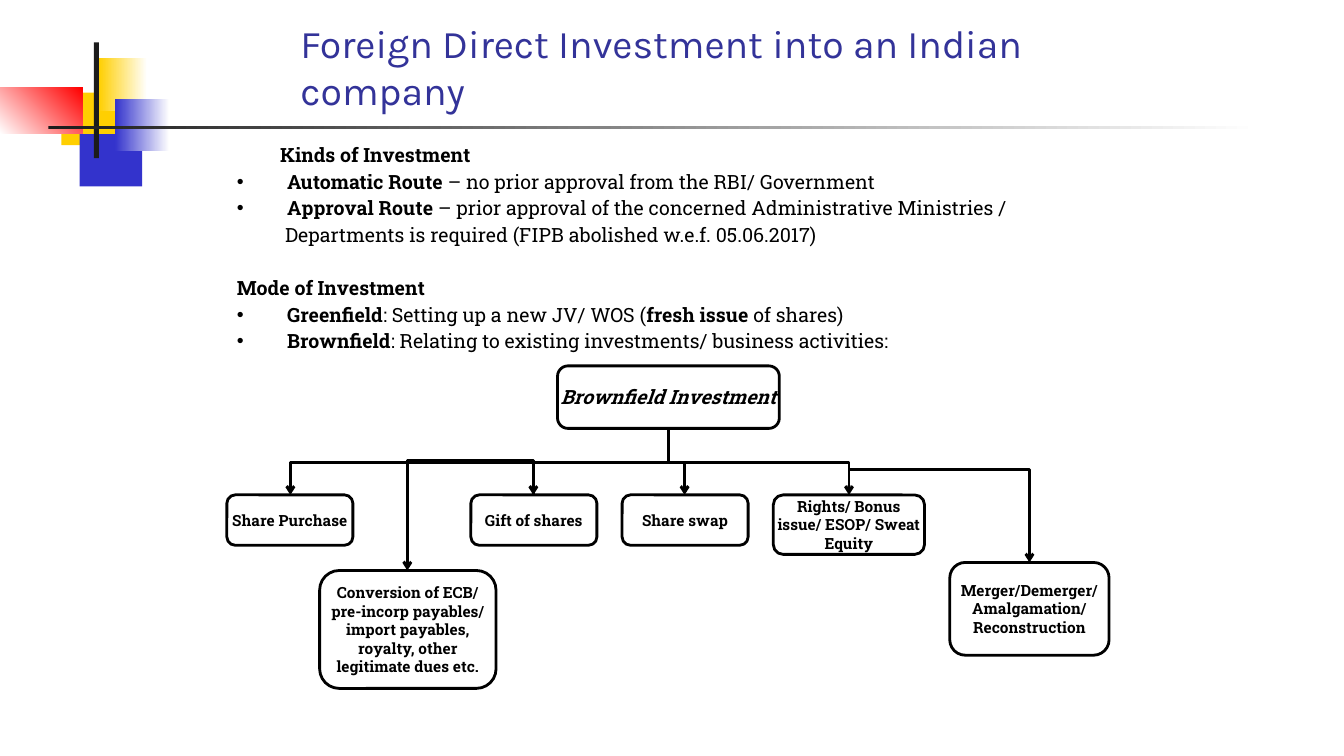
from dataclasses import dataclass

from lxml.etree import SubElement
from pptx import Presentation
from pptx.dml.color import RGBColor
from pptx.enum.shapes import MSO_CONNECTOR, MSO_SHAPE
from pptx.enum.text import MSO_ANCHOR, MSO_AUTO_SIZE, PP_ALIGN
from pptx.oxml.ns import qn
from pptx.slide import Slide
from pptx.text.text import _Paragraph
from pptx.util import Emu, Pt

EMU_PER_PX = 9144

BLACK = RGBColor(0x00, 0x00, 0x00)
WHITE = RGBColor(0xFF, 0xFF, 0xFF)
CHARCOAL = RGBColor(0x1C, 0x1C, 0x1C)
YELLOW = RGBColor(0xFF, 0xCF, 0x01)
BLUE = RGBColor(0x33, 0x33, 0xCC)
RED = RGBColor(0xFF, 0x00, 0x00)
TITLE_BLUE = RGBColor(0x33, 0x33, 0x99)

TITLE_FONT = "Karla"
BODY_FONT = "Roboto Slab"


@dataclass(frozen=True)
class Rect:
    x: int
    y: int
    w: int
    h: int


@dataclass(frozen=True)
class Ornament:
    rect: Rect
    colors: tuple[RGBColor, ...]
    angle: int = 0


@dataclass(frozen=True)
class Line:
    runs: tuple[tuple[str, bool], ...]
    left: int = 0
    bullet: bool = False
    before: int = 0


@dataclass(frozen=True)
class Box:
    rect: Rect
    text: str
    size: int = 11
    italic: bool = False


@dataclass(frozen=True)
class Link:
    start: tuple[int, int]
    end: tuple[int, int]
    bend: float = 0.5


ORNAMENTS = (
    Ornament(Rect(61, 92, 64, 52), (YELLOW,)),
    Ornament(Rect(79, 133, 62, 52), (BLUE,)),
    Ornament(Rect(98, 58, 48, 52), (YELLOW, WHITE)),
    Ornament(Rect(114, 98, 54, 52), (BLUE, WHITE)),
    Ornament(Rect(0, 87, 82, 46), (WHITE, RED), 45),
    Ornament(Rect(93, 42, 5, 115), (CHARCOAL,)),
    Ornament(Rect(48, 125, 1200, 3), (CHARCOAL, WHITE)),
)

LINES = (
    Line((("Kinds of Investment", True),), 43),
    Line((("Automatic Route ", True),
          ("– no prior approval from the RBI/ Government", False)), 50, True),
    Line((("Approval Route ", True),
          ("– prior approval of the concerned Administrative Ministries /", False)), 50, True),
    Line((("Departments is required (FIPB abolished w.e.f. 05.06.2017)", False),), 48),
    Line((("Mode of Investment", True),), before=19),
    Line((("Greenfield", True), (": Setting up a new JV/ WOS (", False),
          ("fresh issue ", True), ("of shares)", False)), 50, True),
    Line((("Brownfield", True),
          (": Relating to existing investments/ business activities:", False)), 50, True),
)

ROW_TOP = 491
BOXES = (
    Box(Rect(553, 363, 220, 62), "Brownfield Investment", 14, True),
    Box(Rect(225, ROW_TOP, 125, 50), "Share Purchase"),
    Box(Rect(467, ROW_TOP, 125, 50), "Gift of shares"),
    Box(Rect(617, ROW_TOP, 125, 50), "Share swap"),
    Box(Rect(767, ROW_TOP, 150, 59), "Rights/ Bonus issue/ ESOP/ Sweat Equity"),
    Box(Rect(942, 558, 158, 92), "Merger/Demerger/ Amalgamation/ Reconstruction"),
    Box(Rect(317, 566, 175, 117),
        "Conversion of ECB/ pre-incorp payables/ import payables, royalty, other legitimate dues etc."),
)

ROOT = (663, 426)
GIFT = (529, ROW_TOP)
RIGHTS = (842, ROW_TOP)
LINKS = (
    *(Link(ROOT, end) for end in ((288, ROW_TOP), GIFT, (679, ROW_TOP), RIGHTS)),
    Link(GIFT, (404, 566), -0.45),
    Link(RIGHTS, (1021, 558), -0.375),
)


def px(n: float) -> Emu:
    return Emu(round(n * EMU_PER_PX))


def place(rect: Rect) -> tuple[Emu, Emu, Emu, Emu]:
    return px(rect.x), px(rect.y), px(rect.w), px(rect.h)


def add_run(p: _Paragraph, text: str, font: str, size: int, color: RGBColor,
            bold: bool = False, italic: bool = False) -> None:
    r = p.add_run()
    r.text = text
    r.font.name = font
    r.font.size = Pt(size)
    r.font.color.rgb = color
    r.font.bold = bold
    r.font.italic = italic


def add_ornament(s: Slide, item: Ornament) -> None:
    sp = s.shapes.add_shape(MSO_SHAPE.RECTANGLE, *place(item.rect))
    sp.shadow.inherit = False
    sp.line.fill.background()
    if len(item.colors) == 1:
        sp.fill.solid()
        sp.fill.fore_color.rgb = item.colors[0]
        return
    sp.fill.gradient()
    sp.fill.gradient_angle = item.angle
    for stop, color in zip(sp.fill.gradient_stops, item.colors):
        stop.color.rgb = color


def set_title(s: Slide, text: str) -> None:
    sp = s.shapes.title
    sp.left, sp.top, sp.width, sp.height = place(Rect(288, 17, 846, 101))
    tf = sp.text_frame
    tf.word_wrap = True
    tf.auto_size = MSO_AUTO_SIZE.NONE
    tf.vertical_anchor = MSO_ANCHOR.BOTTOM
    p = tf.paragraphs[0]
    p.alignment = PP_ALIGN.LEFT
    add_run(p, text, TITLE_FONT, 28, TITLE_BLUE)


def add_body(s: Slide, lines: tuple[Line, ...]) -> None:
    sp = s.shapes.add_textbox(*place(Rect(225, 134, 901, 217)))
    tf = sp.text_frame
    tf.word_wrap = True
    for i, line in enumerate(lines):
        p = tf.add_paragraph() if i else tf.paragraphs[0]
        p.line_spacing = Pt(19)
        p.space_before = Pt(line.before)
        pPr = p._p.get_or_add_pPr()
        pPr.set("marL", str(px(line.left)))
        if line.bullet:
            pPr.set("indent", str(-px(line.left)))
            SubElement(pPr, qn("a:buFont"), typeface="Arial")
            SubElement(pPr, qn("a:buChar"), char="•")
        for text, bold in line.runs:
            add_run(p, text, BODY_FONT, 14, BLACK, bold)


def add_box(s: Slide, box: Box) -> None:
    sp = s.shapes.add_shape(MSO_SHAPE.ROUNDED_RECTANGLE, *place(box.rect))
    sp.shadow.inherit = False
    sp.fill.solid()
    sp.fill.fore_color.rgb = WHITE
    sp.line.color.rgb = BLACK
    sp.line.width = Pt(2)
    tf = sp.text_frame
    tf.word_wrap = True
    tf.vertical_anchor = MSO_ANCHOR.MIDDLE
    tf.margin_left = tf.margin_right = tf.margin_top = tf.margin_bottom = 0
    p = tf.paragraphs[0]
    p.alignment = PP_ALIGN.CENTER
    p.space_after = Pt(9)
    add_run(p, box.text, BODY_FONT, box.size, BLACK, True, box.italic)


def add_link(s: Slide, link: Link) -> None:
    (x1, y1), (x2, y2) = link.start, link.end
    drop, span = y2 - y1, abs(x2 - x1)
    left, top = (x1 + x2 - drop) / 2, (y1 + y2 - span) / 2
    cxn = s.shapes.add_connector(MSO_CONNECTOR.ELBOW, px(left), px(top),
                                 px(left + drop), px(top + span))
    cxn.line.color.rgb = BLACK
    cxn.line.width = Pt(2)
    spPr = cxn._element.spPr
    xfrm = spPr.find(qn("a:xfrm"))
    xfrm.set("rot", str((90 if x2 < x1 else 270) * 60000))
    if x2 > x1:
        xfrm.set("flipH", "1")
    guides = spPr.find(qn("a:prstGeom")).get_or_add_avLst()
    SubElement(guides, qn("a:gd"), name="adj1", fmla=f"val {round(link.bend * 100000)}")
    SubElement(cxn.line._get_or_add_ln(), qn("a:tailEnd"), type="arrow")
    SubElement(spPr, qn("a:effectLst"))


def main() -> None:
    prs = Presentation()
    prs.slide_width, prs.slide_height = px(1333), px(750)
    s = prs.slides.add_slide(prs.slide_layouts[5])
    for item in ORNAMENTS:
        add_ornament(s, item)
    add_body(s, LINES)
    set_title(s, "Foreign Direct Investment into an Indian company")
    for box in BOXES:
        add_box(s, box)
    for link in LINKS:
        add_link(s, link)
    prs.save("out.pptx")


if __name__ == "__main__":
    main()
